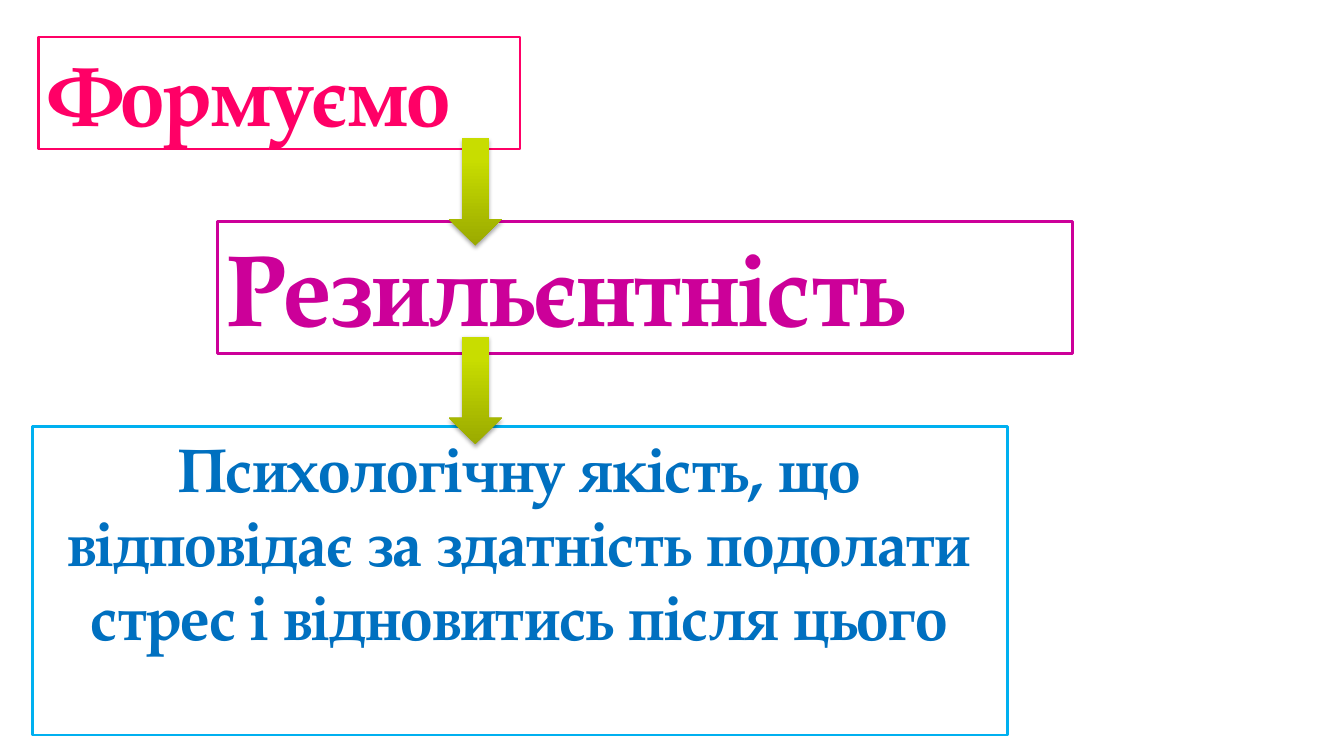
from lxml import etree
from pptx import Presentation
from pptx.dml.color import RGBColor
from pptx.enum.shapes import MSO_SHAPE
from pptx.enum.text import MSO_ANCHOR, PP_ALIGN
from pptx.oxml.ns import qn
from pptx.util import Pt

RECT, DOWN_ARROW = MSO_SHAPE.RECTANGLE, MSO_SHAPE.DOWN_ARROW
LEFT, CENTER, TOP = PP_ALIGN.LEFT, PP_ALIGN.CENTER, MSO_ANCHOR.TOP

# Content: text, style, alignment, (left, top, width, height)
BOXES = [
    ("Психологічну якість, що відповідає за здатність подолати "
     "стрес і відновитись після цього", "meaning", CENTER, (23, 304.5, 696.5, 220.5)),
    ("Формуємо", "action", LEFT, (27.5, 26.5, 344, 80)),
    ("Резильєнтність", "quality", LEFT, (155.5, 158, 610.5, 94.5)),
]
ARROW_LEFT, ARROW_WIDTH, ARROW_HEIGHT = 320.5, 38, 77
ARROW_TOPS = [98.5, 240.5]

THEME = {
    "font": "TeX Gyre Pagella",
    "paper": "FFFFFF",
    "line_width": 2,
    # style: (type size, text colour, line colour)
    "meaning": (44, "0070C0", "00B0F0"),
    "action": (60, "FF0066", "FF0066"),
    "quality": (72, "CC0099", "CC0099"),
    "arrow": [(0, "9AAA00"), (0.8, "C8DD00")],
    "shadow": "000000",
}


def rgb(value):
    return RGBColor.from_string(value)


def add_shape(slide, kind, frame):
    sp = slide.shapes.add_shape(kind, *[Pt(v) for v in frame])
    sp.shadow.inherit = False
    return sp


def add_box(slide, text, style, align, frame):
    size, text_color, line_color = THEME[style]
    sp = add_shape(slide, RECT, frame)
    sp.fill.solid()
    sp.fill.fore_color.rgb = rgb(THEME["paper"])
    sp.line.color.rgb = rgb(line_color)
    sp.line.width = Pt(THEME["line_width"])
    tf = sp.text_frame
    tf.word_wrap = True
    tf.vertical_anchor = TOP
    p = tf.paragraphs[0]
    p.alignment = align
    r = p.add_run()
    r.text = text
    r.font.name = THEME["font"]
    r.font.size = Pt(size)
    r.font.bold = True
    r.font.color.rgb = rgb(text_color)


def add_arrow(slide, top):
    sp = add_shape(slide, DOWN_ARROW, (ARROW_LEFT, top, ARROW_WIDTH, ARROW_HEIGHT))
    sp.line.fill.background()
    sp.fill.gradient()
    sp.fill.gradient_angle = 90
    for stop, (position, color) in zip(sp.fill.gradient_stops, THEME["arrow"]):
        stop.position = position
        stop.color.rgb = rgb(color)
    # Soft shadow below the arrow
    effects = sp._element.spPr.find(qn("a:effectLst"))
    shadow = etree.SubElement(effects, qn("a:outerShdw"), blurRad=str(Pt(3.1)),
                              dist=str(Pt(1.8)), dir="5400000", rotWithShape="0")
    color = etree.SubElement(shadow, qn("a:srgbClr"), val=THEME["shadow"])
    etree.SubElement(color, qn("a:alpha"), val="35000")


def main():
    prs = Presentation()
    prs.slide_width, prs.slide_height = Pt(960), Pt(540)
    slide = prs.slides.add_slide(prs.slide_layouts[6])
    # Framed texts
    for box in BOXES:
        add_box(slide, *box)
    # Arrows from one step to the next
    for top in ARROW_TOPS:
        add_arrow(slide, top)
    prs.save("out.pptx")


if __name__ == "__main__":
    main()
